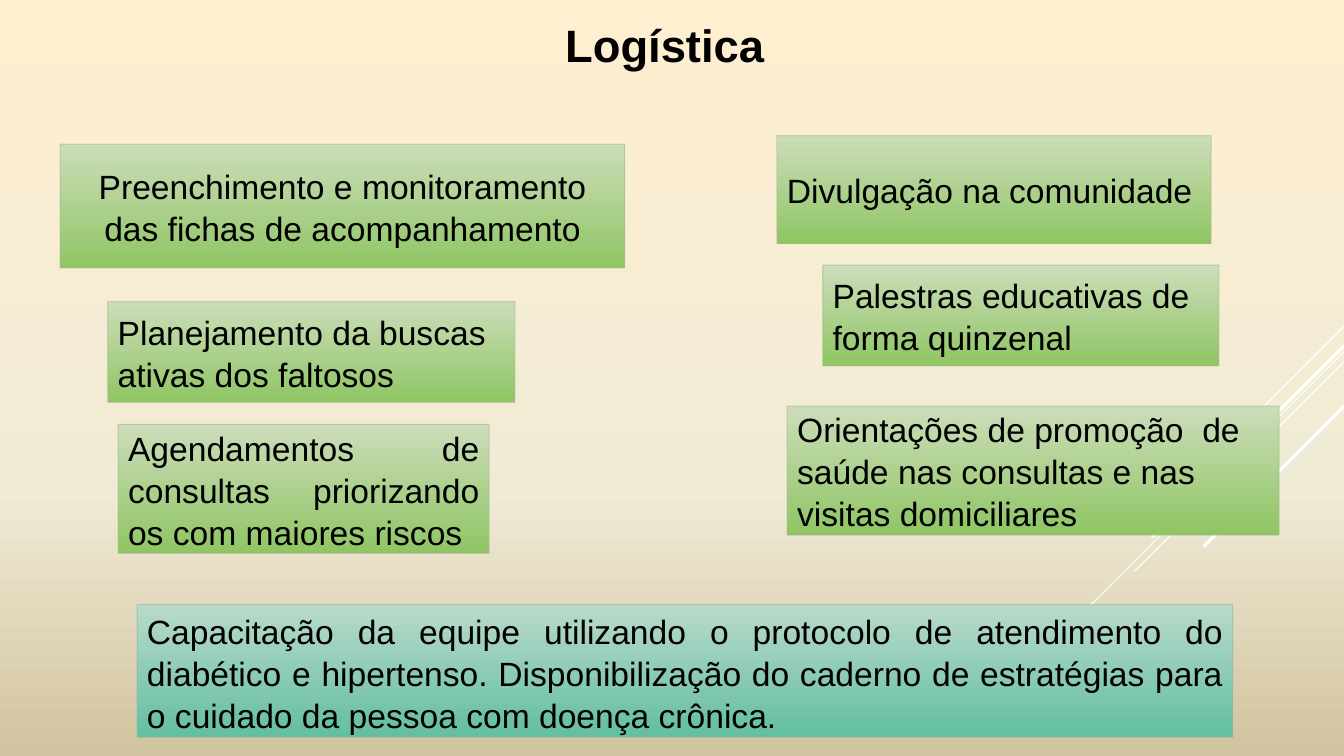
from copy import deepcopy

from lxml import etree
from pptx import Presentation
from pptx import util as u
from pptx.dml.color import RGBColor
from pptx.enum import shapes, text
from pptx.oxml import ns

BLACK = RGBColor(0x00, 0x00, 0x00)
WHITE = RGBColor(0xFF, 0xFF, 0xFF)
CREAM = RGBColor(0xFF, 0xEF, 0xD1)
IVORY = RGBColor(0xF0, 0xEB, 0xD5)
SAND = RGBColor(0xD1, 0xC3, 0x9F)
PALE_GREEN = RGBColor(0xCC, 0xDD, 0xBA)
GREEN = RGBColor(0x8F, 0xC5, 0x63)
GREEN_EDGE = RGBColor(0xA4, 0xBB, 0x8B)
PALE_TEAL = RGBColor(0xB9, 0xDA, 0xCA)
TEAL = RGBColor(0x63, 0xBE, 0xA2)
TEAL_EDGE = RGBColor(0x8A, 0xB7, 0xA1)

GREEN_STYLE = (PALE_GREEN, GREEN, GREEN_EDGE)
TEAL_STYLE = (PALE_TEAL, TEAL, TEAL_EDGE)
LEFT, CENTER, JUSTIFY = (text.PP_ALIGN.LEFT, text.PP_ALIGN.CENTER,
                         text.PP_ALIGN.JUSTIFY)
MIDDLE, TOP = text.MSO_ANCHOR.MIDDLE, text.MSO_ANCHOR.TOP
SLIDE_WIDTH, SLIDE_HEIGHT = 960, 540


class SlideBuilder:
    font = "Arial"
    body_size = 24
    line_spacing = 1.04
    edge_width = 0.75
    edge_opacity = 60

    def __init__(self, page):
        self.page = page

    def gradient(self, fill, *colors):
        """Vertical gradient from top to bottom, first and last colour."""
        fill.gradient()
        fill.gradient_angle = 270
        for stop, color, position in zip(fill.gradient_stops, colors, (0, 1)):
            stop.color.rgb = color
            stop.position = position

    def background(self, top, middle, bottom, middle_position):
        fill = self.page.background.fill
        self.gradient(fill, top, bottom)
        first = self.page.element.find(".//" + ns.qn("a:gs"))
        first.addnext(deepcopy(first))
        stop = fill.gradient_stops[1]
        stop.color.rgb = middle
        stop.position = middle_position

    def ray(self, y, run, width):
        """Diagonal line at 45 degrees, down from the right edge."""
        line = self.page.shapes.add_connector(
            shapes.MSO_CONNECTOR.STRAIGHT, u.Pt(SLIDE_WIDTH), u.Pt(y),
            u.Pt(SLIDE_WIDTH - run), u.Pt(y + run))
        line.line.color.rgb = WHITE
        line.line.width = u.Pt(width)
        etree.SubElement(line.element.spPr, ns.qn("a:effectLst"))

    def set_words(self, shape, words, align, anchor, size, bold=False):
        frame = shape.text_frame
        frame.word_wrap = True
        frame.vertical_anchor = anchor
        frame.text = words
        para = frame.paragraphs[0]
        para.alignment = align
        para.line_spacing = self.line_spacing
        span = para.runs[0]
        span.font.name = self.font
        span.font.size = u.Pt(size)
        span.font.bold = bold
        span.font.color.rgb = BLACK

    def title(self, words, place):
        box = self.page.shapes.add_textbox(*map(u.Pt, place))
        self.set_words(box, words, CENTER, MIDDLE, 32.4, bold=True)

    def card(self, words, place, style=GREEN_STYLE, align=LEFT, anchor=MIDDLE):
        light, dark, edge = style
        box = self.page.shapes.add_shape(
            shapes.MSO_SHAPE.RECTANGLE, *map(u.Pt, place))
        box.shadow.inherit = False
        self.gradient(box.fill, light, dark)
        box.line.color.rgb = edge
        box.line.width = u.Pt(self.edge_width)
        color = box.element.spPr.find(ns.qn("a:ln")).find(
            ".//" + ns.qn("a:srgbClr"))
        alpha = etree.SubElement(color, ns.qn("a:alpha"))
        alpha.set("val", str(self.edge_opacity * 1000))
        self.set_words(box, words, align, anchor, self.body_size)


def main():
    deck = Presentation()
    deck.slide_width, deck.slide_height = u.Pt(SLIDE_WIDTH), u.Pt(SLIDE_HEIGHT)
    builder = SlideBuilder(deck.slides.add_slide(deck.slide_layouts[6]))

    # Background and diagonal rays
    builder.background(CREAM, IVORY, SAND, 0.65)
    for y, run, width in ((233.3, 72, 0.75), (251.3, 234.7, 0.75),
                          (258.5, 149.5, 0.75), (247, 137, 2.25),
                          (290.2, 100.2, 2.25)):
        builder.ray(y, run, width)

    # Title
    builder.title("Logística", (241.5, 10.5, 466.6, 41))

    # Left column
    builder.card("Preenchimento e monitoramento das fichas de acompanhamento",
                 (43, 103, 403.2, 88.3), align=CENTER)
    builder.card("Planejamento da buscas ativas dos faltosos",
                 (77, 215.5, 290.9, 72))
    builder.card("Agendamentos de consultas priorizando os com maiores riscos",
                 (84.4, 303.1, 265, 92.2), align=JUSTIFY)

    # Right column
    builder.card("Divulgação na comunidade", (555, 97, 310.1, 77))
    builder.card("Orientações de promoção  de saúde nas consultas e nas "
                 "visitas domiciliares", (562.3, 290, 351.4, 92.2))
    builder.card("Palestras educativas de forma quinzenal",
                 (587.7, 189.4, 283, 72))

    # Team training
    builder.card("Capacitação da equipe utilizando o protocolo de atendimento "
                 "do diabético e hipertenso. Disponibilização do caderno de "
                 "estratégias para o cuidado da pessoa com doença crônica.",
                 (97.9, 431.8, 782.6, 94.7), TEAL_STYLE, JUSTIFY, TOP)

    deck.save("out.pptx")


if __name__ == "__main__":
    main()
